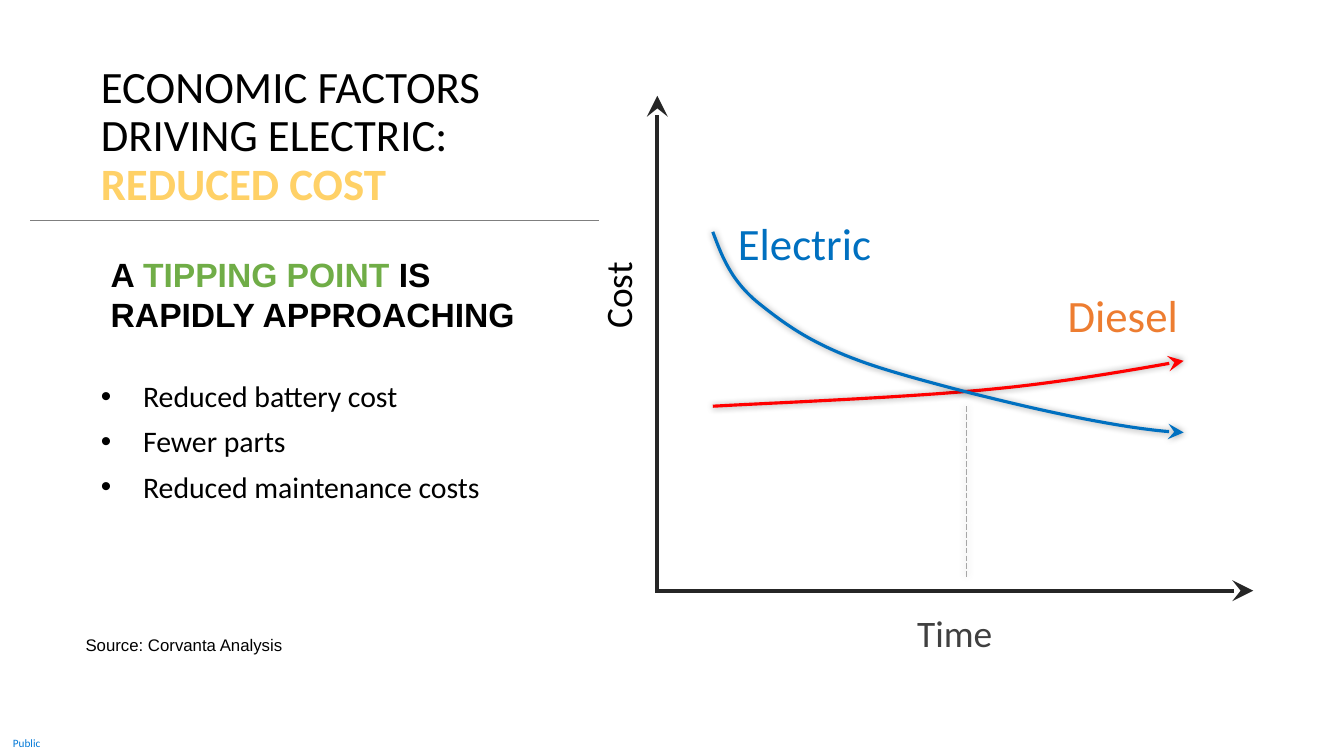
from lxml import etree
from pptx import Presentation
from pptx.dml.color import RGBColor
from pptx.enum.dml import MSO_LINE
from pptx.enum.shapes import MSO_CONNECTOR
from pptx.enum.text import MSO_ANCHOR, PP_ALIGN
from pptx.oxml.ns import qn
from pptx.util import Inches, Pt

STRAIGHT = MSO_CONNECTOR.STRAIGHT
LONG_DASH = MSO_LINE.LONG_DASH
CENTER = PP_ALIGN.CENTER
MIDDLE = MSO_ANCHOR.MIDDLE
BLACK = "000000"
ELECTRIC = "0070C0"
STEPS = 24

deck = Presentation()
deck.slide_width, deck.slide_height = Inches(13.33), Inches(7.5)
page = deck.slides.add_slide(deck.slide_layouts[6])


def add_text(bounds, paragraphs, size, font="Calibri", inset=True, wrap=True):
    box = page.shapes.add_textbox(*[Inches(value) for value in bounds])
    frame = box.text_frame
    frame.word_wrap = wrap
    if not inset:
        frame.margin_left = frame.margin_right = 0
        frame.margin_top = frame.margin_bottom = 0
    for index, spans in enumerate(paragraphs):
        para = frame.add_paragraph() if index else frame.paragraphs[0]
        for text, color, bold in spans:
            span = para.add_run()
            span.text = text
            span.font.name, span.font.size, span.font.bold = font, Pt(size), bold
            span.font.color.rgb = RGBColor.from_string(color)
    return box


def style_line(shape, color, width, arrow=None, shadow=False):
    shape.line.color.rgb = RGBColor.from_string(color)
    shape.line.width = Pt(width)
    if arrow:
        etree.SubElement(shape.line._get_or_add_ln(), qn(f"a:{arrow}"),
                         type="stealth", w="lg", len="lg")
    effects = etree.SubElement(shape.element.spPr, qn("a:effectLst"))
    if shadow:
        outer = etree.SubElement(effects, qn("a:outerShdw"), blurRad=str(Pt(5)),
                                 dist="0", dir="0", rotWithShape="0")
        tint = etree.SubElement(outer, qn("a:srgbClr"), val=BLACK)
        etree.SubElement(tint, qn("a:alpha"), val="40000")


public = add_text((0, 7.25, 0.53, 0.25), [[("Public", "0078D7", False)]], 8, inset=False)
public.text_frame.vertical_anchor = MIDDLE
public.text_frame.paragraphs[0].alignment = CENTER

title = add_text((1, 0.64, 5, 1.96),
                 [[("ECONOMIC FACTORS DRIVING ELECTRIC:", BLACK, False)],
                  [("REDUCED COST", "FFD167", True)]], 32, inset=False)
for para in title.text_frame.paragraphs:
    para.line_spacing = 0.9

add_text((0.75, 6.25, 8.72, 0.3), [[("Source: Corvanta Analysis", BLACK, False)]], 12, "Arial")

straight_lines = [
    ((6.52, 0.95, 6.52, 5.88), "262626", 3, "headEnd", False, None),
    ((6.51, 5.86, 12.43, 5.86), "262626", 3, "tailEnd", False, None),
    ((9.58, 4.03, 9.58, 5.72), "A6A6A6", 0.5, None, True, LONG_DASH),
    ((0.3, 2.19, 5.94, 2.19), "7F7F7F", 0.5, None, False, None),
]
for ends, color, width, arrow, shadow, dash in straight_lines:
    line = page.shapes.add_connector(STRAIGHT, *[Inches(value) for value in ends])
    if dash:
        line.line.dash_style = dash
    style_line(line, color, width, arrow, shadow)

cost = add_text((5.69, 2.65, 0.87, 0.55), [[("Cost", BLACK, False)]], 26.7, wrap=False)
cost.rotation = 270
time = add_text((6.51, 6, 5.92, 0.55), [[("Time", "404040", False)]], 26.7)
time.text_frame.paragraphs[0].alignment = CENTER
add_text((7.22, 2.09, 1.54, 0.64), [[("Electric", ELECTRIC, False)]], 32, wrap=False)
add_text((10.49, 2.81, 1.31, 0.64), [[("Diesel", "ED7D31", False)]], 32, wrap=False)

diesel_curve = [(7.07, 4.03), (7.61, 4), (9.07, 3.94), (9.84, 3.86),
                (10.6, 3.79), (11.45, 3.63), (11.74, 3.58)]
electric_curve = [(7.07, 2.3), (7.16, 2.54), (7.25, 2.79), (7.54, 3.02),
                  (7.83, 3.25), (8.13, 3.47), (8.83, 3.68),
                  (9.53, 3.89), (11.04, 4.27), (11.74, 4.29)]
for knots, color in [(diesel_curve, "FF0000"), (electric_curve, ELECTRIC)]:
    points = []
    for start in range(0, len(knots) - 1, 3):
        for step in range(1, STEPS + 1):
            t = step / STEPS
            weights = [(1 - t) ** 3, 3 * t * (1 - t) ** 2, 3 * t ** 2 * (1 - t), t ** 3]
            corners = knots[start:start + 4]
            points.append(tuple(
                Inches(sum(weight * corner[axis] for weight, corner in zip(weights, corners)))
                for axis in (0, 1)))
    builder = page.shapes.build_freeform(Inches(knots[0][0]), Inches(knots[0][1]))
    builder.add_line_segments(points, close=False)
    curve = builder.convert_to_shape()
    curve.fill.background()
    style_line(curve, color, 2.25, "tailEnd", True)

reasons = ["Reduced battery cost", "Fewer parts", "Reduced maintenance costs"]
bullets = add_text((1, 3.75, 4.34, 1.93),
                   [[(reason, BLACK, False)] for reason in reasons], 21.3, inset=False)
for para in bullets.text_frame.paragraphs:
    para.space_after = Pt(6.7)
    properties = para._p.get_or_add_pPr()
    properties.set("marL", str(Inches(0.42)))
    properties.set("indent", str(Inches(-0.42)))
    etree.SubElement(properties, qn("a:buFont"), typeface="Arial")
    etree.SubElement(properties, qn("a:buChar"), char="•")

add_text((1, 2.47, 7, 0.91),
         [[("A ", BLACK, True), ("TIPPING POINT ", "70AD47", True), ("IS", BLACK, True)],
          [("RAPIDLY APPROACHING", BLACK, True)]], 24, "Arial")

deck.save("out.pptx")
